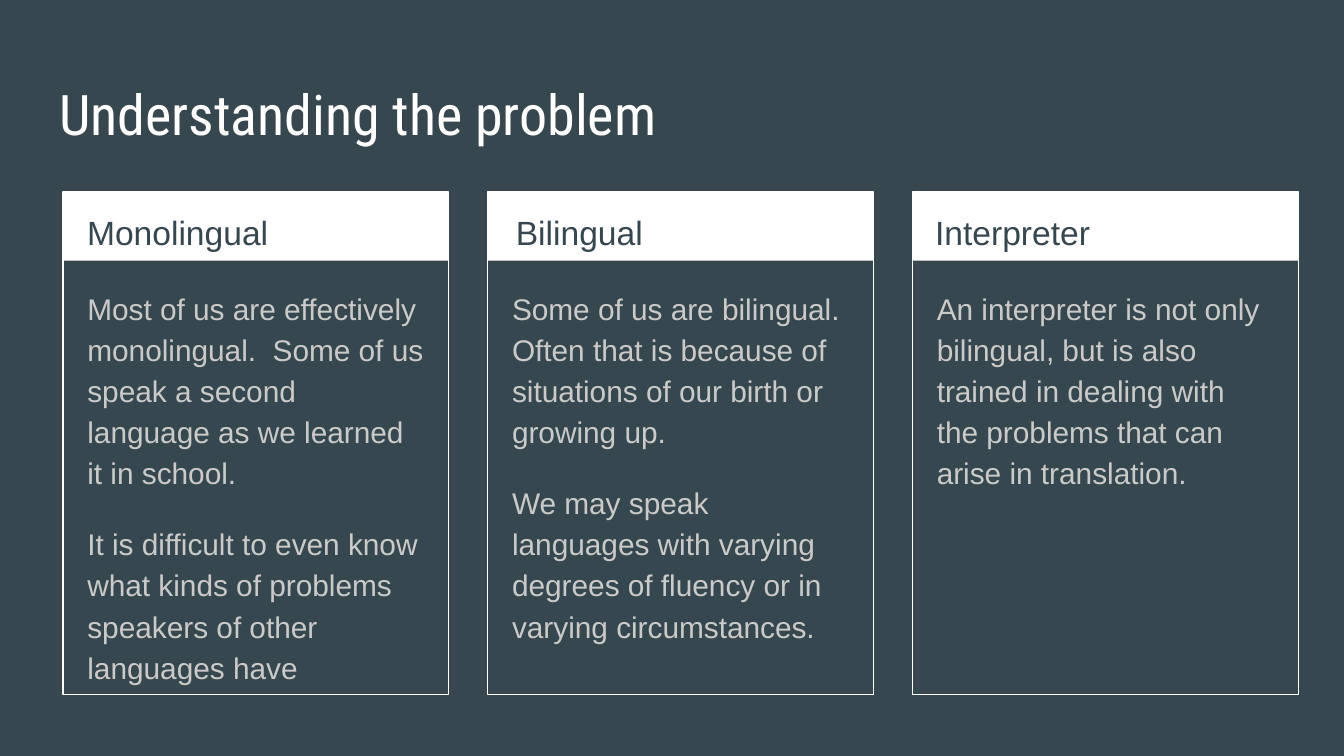
from lxml.etree import SubElement
from pptx import Presentation
from pptx.dml.color import RGBColor
from pptx.enum.shapes import MSO_SHAPE as Shape
from pptx.enum.text import MSO_ANCHOR as Anchor, MSO_AUTO_SIZE as Auto, PP_ALIGN as Align
from pptx.oxml.ns import qn
from pptx.util import Inches, Pt

TITLE = "Understanding the problem"
# heading, shift of the heading from the card's left edge, paragraphs
CARDS = [
    ("Monolingual", 0.08, [
        "Most of us are effectively monolingual.  Some of us speak a second "
        "language as we learned it in school.",
        "It is difficult to even know what kinds of problems speakers of other "
        "languages have",
    ]),
    ("Bilingual", 0.11, [
        "Some of us are bilingual.  Often that is because of situations of our "
        "birth or growing up.",
        "We may speak languages with varying degrees of fluency or in varying "
        "circumstances.",
    ]),
    ("Interpreter", 0.07, [
        "An interpreter is not only bilingual, but is also trained in dealing "
        "with the problems that can arise in translation.",
    ]),
]

WHITE, SLATE, GREY = "FFFFFF", "37474F", "CACACA"
WIDE = 10
HIGH = WIDE * 9 / 16
LEFT, TOP, STEP = 0.47, 1.43, 3.16
CARD_W, CARD_H, BAR_H = 2.87, 3.74, 0.51


def color(code):
    return RGBColor.from_string(code)


def place(shape, left, top, width, height):
    shape.left, shape.top = Inches(left), Inches(top)
    shape.width, shape.height = Inches(width), Inches(height)


def write(shape, lines, font, size, code, space=1.0, after=0):
    """Fill a text shape with plain, unbulleted paragraphs."""
    frame = shape.text_frame
    frame.text = "\n".join(lines)
    frame.word_wrap = True
    frame.auto_size = Auto.NONE
    frame.vertical_anchor = Anchor.TOP
    frame.margin_left = frame.margin_right = Inches(0.1)
    frame.margin_top = frame.margin_bottom = Inches(0.1)
    for para in frame.paragraphs:
        para.alignment = Align.LEFT
        para.line_spacing = space
        para.space_before, para.space_after = Pt(0), Pt(after)
        para.font.name, para.font.size = font, Pt(size)
        para.font.bold = False
        para.font.color.rgb = color(code)
        props = para._p.get_or_add_pPr()
        props.set("marL", "0")
        props.set("indent", "0")
        bullet = SubElement(props, qn("a:buNone"))
        props.find(qn("a:defRPr")).addprevious(bullet)


def add_box(slide, left, height):
    box = slide.shapes.add_shape(Shape.RECTANGLE, Inches(left), Inches(TOP),
                                 Inches(CARD_W), Inches(height))
    box.shadow.inherit = False
    return box


def add_card(slide, left, head, shift, lines, body):
    bar = add_box(slide, left, BAR_H)
    bar.fill.solid()
    bar.fill.fore_color.rgb = color(WHITE)
    bar.line.fill.background()

    edge = add_box(slide, left, CARD_H)
    edge.fill.background()
    edge.line.color.rgb = color(WHITE)
    edge.line.width = Pt(0.75)

    label = slide.shapes.add_textbox(0, 0, 0, 0)
    place(label, left + shift, TOP, 2.73, 0.5)
    write(label, [head], "Arial", 18, SLATE, 1.15)

    place(body, left + 0.08, 2.02, 2.71, 3.06)
    write(body, lines, "Arial", 16, GREY, 1.15, 16)


def main():
    deck = Presentation()
    deck.slide_width, deck.slide_height = Inches(WIDE), Inches(HIGH)
    slide = deck.slides.add_slide(deck.slide_layouts.get_by_name("Comparison"))
    slide.background.fill.solid()
    slide.background.fill.fore_color.rgb = color(SLATE)

    title, *bodies = slide.placeholders
    place(title, 0.34, 0.49, 9.32, 0.63)
    write(title, [TITLE], "Roboto Condensed", 30, WHITE)

    for col, (card, body) in enumerate(zip(CARDS, bodies)):
        add_card(slide, LEFT + col * STEP, *card, body)
    for spare in bodies[len(CARDS):]:
        spare.element.getparent().remove(spare.element)

    deck.save("out.pptx")


if __name__ == "__main__":
    main()
